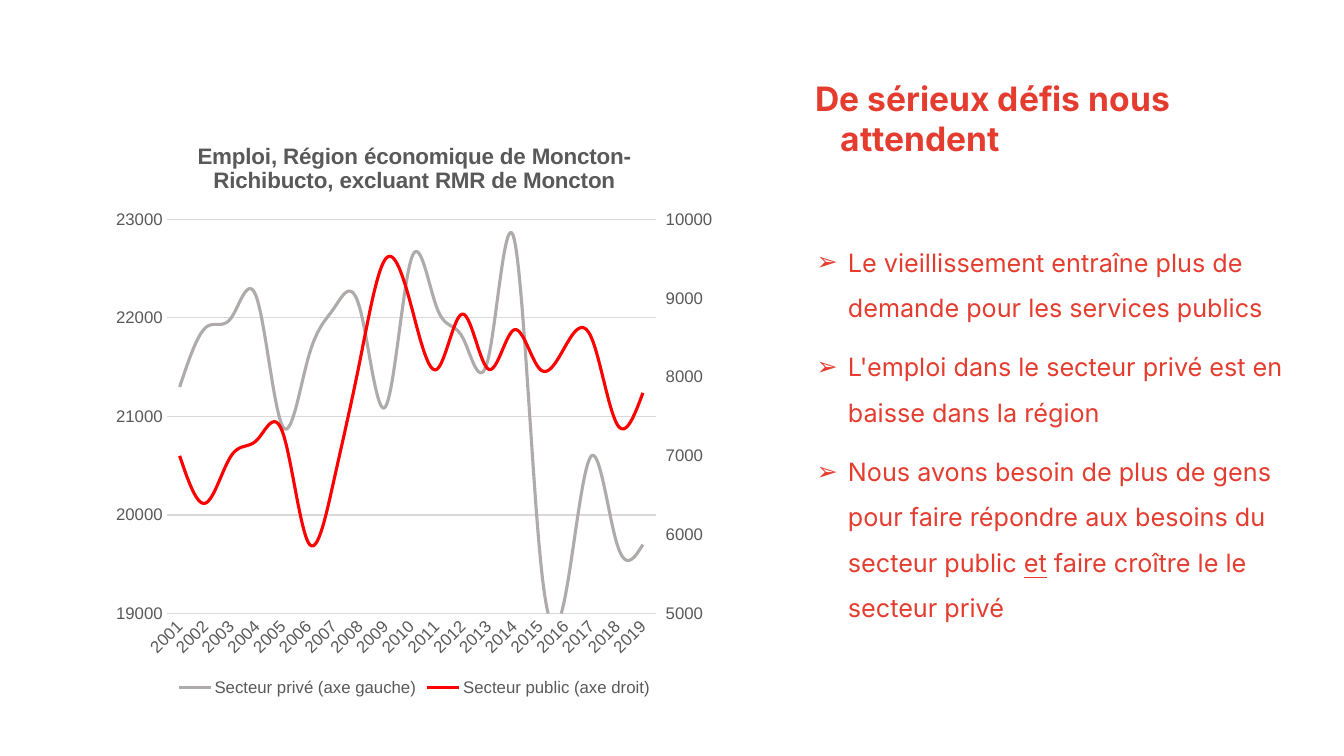
from copy import deepcopy
from dataclasses import dataclass

from lxml.etree import SubElement
from pptx import Presentation
from pptx.chart.chart import Chart
from pptx.chart.data import CategoryChartData
from pptx.dml.color import RGBColor
from pptx.enum.chart import XL_CHART_TYPE, XL_LEGEND_POSITION, XL_TICK_MARK
from pptx.enum.text import MSO_ANCHOR, MSO_AUTO_SIZE, PP_ALIGN
from pptx.oxml import parse_xml
from pptx.oxml.ns import nsdecls, qn
from pptx.shapes.placeholder import SlidePlaceholder
from pptx.text.text import Font, TextFrame, _Paragraph
from pptx.util import Inches, Pt

RED = RGBColor(0xE4, 0x3D, 0x30)
BRIGHT = RGBColor(0xFF, 0x00, 0x00)
SILVER = RGBColor(0xAF, 0xAB, 0xAB)
GRAY = RGBColor(0x59, 0x59, 0x59)
PALE = RGBColor(0xD9, 0xD9, 0xD9)


@dataclass
class Sector:
    name: str
    color: RGBColor
    low: int
    high: int
    jobs: list[int]


SECTORS = [
    Sector("Secteur privé (axe gauche)", SILVER, 19000, 23000,
           [21300, 21900, 22000, 22200, 20900, 21600, 22100, 22100, 21100, 22600,
            22100, 21800, 21600, 22800, 19600, 19200, 20600, 19700, 19700]),
    Sector("Secteur public (axe droit)", BRIGHT, 5000, 10000,
           [7000, 6400, 7000, 7200, 7300, 5900, 6700, 8200, 9500, 8900,
            8100, 8800, 8100, 8600, 8100, 8400, 8500, 7400, 7800]),
]
POINTS = [
    ["Le vieillissement entraîne plus de demande pour les services publics"],
    ["L'emploi dans le secteur privé est en baisse dans la région"],
    ["Nous avons besoin de plus de gens pour faire répondre aux besoins du secteur public ",
     "et", " faire croître le le secteur privé"],
]


def style(font: Font, size: float, color: RGBColor, name: str = "Arial",
          bold: bool = False, under: bool = False) -> None:
    font.size = Pt(size)
    font.color.rgb = color
    font.name = name
    font.bold = bold
    font.underline = under


def write(line: _Paragraph, text: str, **form) -> None:
    run = line.add_run()
    run.text = text
    style(run.font, **form)


def place(holder: SlidePlaceholder, left: float, top: float,
          width: float, height: float) -> TextFrame:
    holder.left, holder.top = Inches(left), Inches(top)
    holder.width, holder.height = Inches(width), Inches(height)
    frame = holder.text_frame
    frame.word_wrap = True
    frame.auto_size = MSO_AUTO_SIZE.NONE
    frame.vertical_anchor = MSO_ANCHOR.TOP
    return frame


def indent(line: _Paragraph, left: float, hang: float) -> None:
    props = line._p.get_or_add_pPr()
    props.set("marL", str(Inches(left)))
    props.set("indent", str(-Inches(hang)))
    line.alignment = PP_ALIGN.LEFT


def bullet(line: _Paragraph) -> None:
    props = line._p.get_or_add_pPr()
    tint = SubElement(props, qn("a:buClr"))
    SubElement(tint, qn("a:srgbClr"), val=str(RED))
    SubElement(props, qn("a:buFont"), typeface="Arial")
    SubElement(props, qn("a:buChar"), char="➢")


def split(chart: Chart, right: Sector) -> None:
    area = chart._chartSpace.chart.plotArea
    left = area.find(qn("c:lineChart"))
    twin = deepcopy(left)
    left.remove(left.findall(qn("c:ser"))[1])
    twin.remove(twin.findall(qn("c:ser"))[0])
    left.addnext(twin)
    cat = deepcopy(area.find(qn("c:catAx")))
    val = deepcopy(area.find(qn("c:valAx")))
    ids = {node.get("val"): str(9001 + i)
           for i, node in enumerate(twin.findall(qn("c:axId")))}
    for part in (twin, cat, val):
        for tag in ("c:axId", "c:crossAx"):
            for node in part.findall(qn(tag)):
                node.set("val", ids[node.get("val")])
    cat.find(qn("c:delete")).set("val", "1")
    val.remove(val.find(qn("c:majorGridlines")))
    scale = val.find(qn("c:scaling"))
    for tag, value in (("c:min", right.low), ("c:max", right.high)):
        scale.find(qn(tag)).set("val", str(value))
    for tag, value in (("c:axPos", "r"), ("c:crosses", "max"), ("c:majorTickMark", "out")):
        val.find(qn(tag)).set("val", value)
    area.findall(qn("c:valAx"))[-1].addnext(val)
    val.addnext(cat)


def fit(chart: Chart, x: float, y: float, w: float, h: float) -> None:
    area = chart._chartSpace.chart.plotArea
    for old in area.findall(qn("c:layout")):
        area.remove(old)
    sides = "".join(f'<c:{tag} val="{value}"/>'
                    for tag, value in zip("xywh", (x, y, w, h)))
    area.insert(0, parse_xml(
        f'<c:layout {nsdecls("c")}><c:manualLayout><c:layoutTarget val="inner"/>'
        f'<c:xMode val="edge"/><c:yMode val="edge"/>{sides}</c:manualLayout></c:layout>'))


def plot(chart: Chart) -> None:
    style(chart.font, 10, GRAY)
    chart.has_title = True
    write(chart.chart_title.text_frame.paragraphs[0],
          "Emploi, Région économique de Moncton-Richibucto, excluant RMR de Moncton",
          size=16, color=GRAY, bold=True)
    chart.has_legend = True
    chart.legend.position = XL_LEGEND_POSITION.BOTTOM
    chart.legend.include_in_layout = False
    style(chart.legend.font, 12, GRAY)
    years, jobs = chart.category_axis, chart.value_axis
    for axis in (years, jobs):
        style(axis.tick_labels.font, 12, GRAY)
        axis.major_tick_mark = axis.minor_tick_mark = XL_TICK_MARK.NONE
    years._element.find(qn("c:txPr")).find(qn("a:bodyPr")).set("rot", "-2700000")
    jobs.format.line.fill.background()
    jobs.minimum_scale, jobs.maximum_scale = SECTORS[0].low, SECTORS[0].high
    jobs.major_unit = 1000
    jobs.has_major_gridlines = True
    for line in (years.format.line, jobs.major_gridlines.format.line):
        line.color.rgb = PALE
        line.width = Pt(0.75)
    chart.plots[0].vary_by_categories = False
    for series, sector in zip(chart.plots[0].series, SECTORS):
        series.smooth = True
        series.format.line.color.rgb = sector.color
        series.format.line.width = Pt(2.25)
    split(chart, SECTORS[1])
    fit(chart, 0.1, 0.17, 0.79, 0.68)


def main() -> None:
    deck = Presentation()
    deck.slide_width, deck.slide_height = Inches(13.33), Inches(7.5)
    slide = deck.slides.add_slide(deck.slide_layouts[1])

    head = place(slide.shapes.title, 7.74, 0.72, 5.09, 1.3).paragraphs[0]
    indent(head, 0.5, 0.25)
    write(head, "De sérieux défis nous attendent", size=24, color=RED, name="Inter", bold=True)

    body = place(slide.placeholders[1], 7.75, 2.25, 5.09, 4.33)
    for i, parts in enumerate(POINTS):
        line = body.add_paragraph() if i else body.paragraphs[0]
        indent(line, 0.56, 0.31)
        bullet(line)
        line.line_spacing = 1.5
        line.space_before = Pt(10 if i else 0)
        for text in parts:
            write(line, text, size=18, color=RED, name="Inter", under=text == "et")

    data = CategoryChartData()
    data.categories = [str(year) for year in range(2001, 2020)]
    for sector in SECTORS:
        data.add_series(sector.name, sector.jobs)
    plot(slide.shapes.add_chart(XL_CHART_TYPE.LINE, Inches(1.04), Inches(1.2),
                                Inches(6.14), Inches(5.75), data).chart)
    deck.save("out.pptx")


if __name__ == "__main__":
    main()
